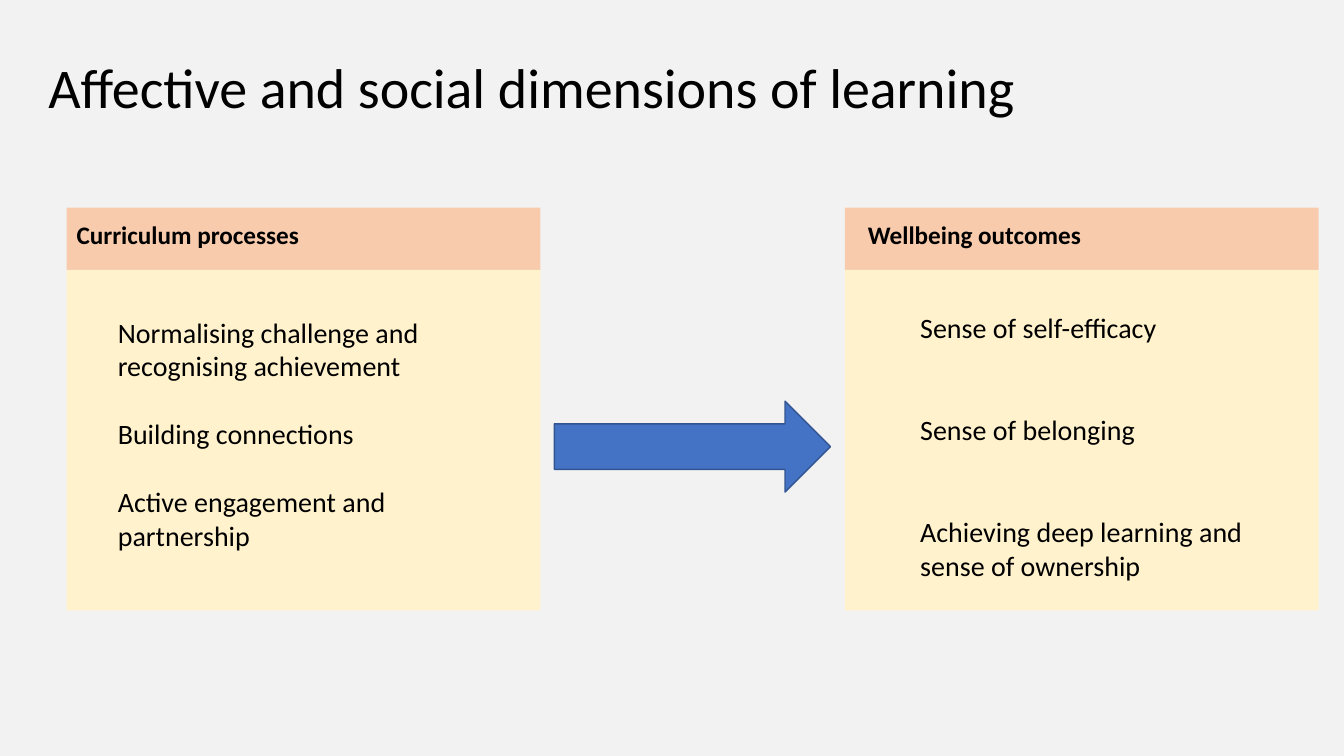
"""Build a slide linking curriculum processes to wellbeing outcomes."""
from dataclasses import dataclass

from pptx import Presentation
from pptx.dml.color import RGBColor as Rgb
from pptx.enum.shapes import MSO_SHAPE as Preset
from pptx.enum.text import MSO_ANCHOR as Anchor, PP_ALIGN as Align
from pptx.util import Cm, Pt


@dataclass(frozen=True)
class Theme:
    font: str = "Calibri"
    text: str = "000000"
    background: str = "F2F2F2"
    header: str = "F8CBAD"
    body: str = "FFF2CC"
    arrow: str = "4472C4"
    arrow_edge: str = "325491"
    title_size: int = 40
    header_size: int = 18
    list_size: int = 20
    list_line: float = 24.4


THEME = Theme()
PANEL_TOP, PANEL_WIDTH = 5.23, 11.94
HEADER_HEIGHT, BODY_HEIGHT = 1.57, 8.58


def add_block(slide, preset, left, top, width, height, fill, edge=None):
    block = slide.shapes.add_shape(preset, Cm(left), Cm(top), Cm(width), Cm(height))
    block.shadow.inherit = False
    block.fill.solid()
    block.fill.fore_color.rgb = Rgb.from_string(fill)
    if edge:
        block.line.color.rgb = Rgb.from_string(edge)
        block.line.width = Pt(1)
    else:
        block.line.fill.background()
    return block


def write(frame, lines, size, bold=False, gap=0, anchor=Anchor.TOP, spacing=None):
    frame.word_wrap = True
    frame.vertical_anchor = anchor
    for index, line in enumerate(lines):
        paragraph = frame.paragraphs[0] if index == 0 else frame.add_paragraph()
        paragraph.alignment = Align.LEFT
        paragraph.line_spacing = spacing
        if index:
            paragraph.space_before = Pt(gap)
        run = paragraph.add_run()
        run.text = line
        run.font.name = THEME.font
        run.font.size = Pt(size)
        run.font.bold = bold
        run.font.color.rgb = Rgb.from_string(THEME.text)


def add_label(slide, text, left, top, width, height, size, **style):
    label = slide.shapes.add_textbox(Cm(left), Cm(top), Cm(width), Cm(height))
    write(label.text_frame, [text], size, **style)


def add_panel(slide, left, heading, heading_indent, items, list_box, blank_lines):
    add_block(slide, Preset.RECTANGLE, left, PANEL_TOP, PANEL_WIDTH,
              HEADER_HEIGHT, THEME.header)
    add_label(slide, heading, left + heading_indent, PANEL_TOP + 0.18,
              PANEL_WIDTH - heading_indent, 1.02, THEME.header_size, bold=True)
    add_block(slide, Preset.RECTANGLE, left, PANEL_TOP + HEADER_HEIGHT,
              PANEL_WIDTH, BODY_HEIGHT, THEME.body)
    item_list = add_block(slide, Preset.RECTANGLE, *list_box, THEME.body)
    write(item_list.text_frame, items, THEME.list_size,
          gap=blank_lines * THEME.list_line)


def main():
    deck = Presentation()
    deck.slide_width, deck.slide_height = Cm(33.87), Cm(19.05)
    slide = deck.slides.add_slide(deck.slide_layouts[6])
    slide.background.fill.solid()
    slide.background.fill.fore_color.rgb = Rgb.from_string(THEME.background)

    add_label(slide, "Affective and social dimensions of learning",
              0.97, 0.43, 29.21, 3.68, THEME.title_size,
              anchor=Anchor.MIDDLE, spacing=0.9)
    add_panel(slide, 1.68, "Curriculum processes", 0,
              ["Normalising challenge and recognising achievement",
               "Building connections",
               "Active engagement and partnership"],
              (2.72, 7.82, 8.66, 6.25), blank_lines=1)
    add_block(slide, Preset.RIGHT_ARROW, 13.97, 10.11, 6.96, 2.29,
              THEME.arrow, THEME.arrow_edge)
    add_panel(slide, 21.29, "Wellbeing outcomes", 0.33,
              ["Sense of self-efficacy",
               "Sense of belonging",
               "Achieving deep learning and sense of ownership"],
              (22.94, 7.7, 8.66, 7.09), blank_lines=2)
    deck.save("out.pptx")


if __name__ == "__main__":
    main()
